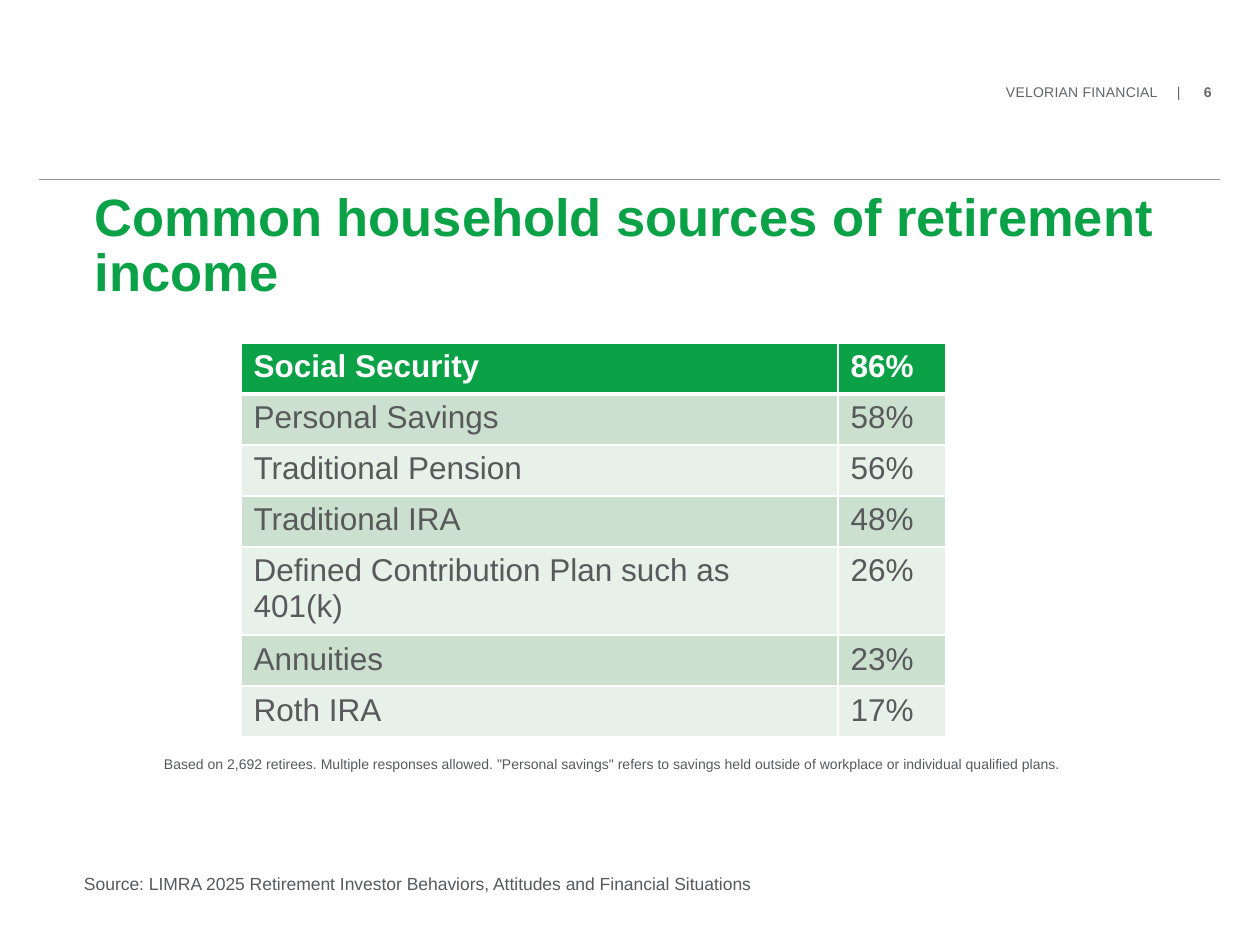
from dataclasses import dataclass
from lxml.etree import SubElement
from pptx import Presentation
from pptx.dml.color import RGBColor
from pptx.enum.shapes import MSO_CONNECTOR
from pptx.enum.text import MSO_ANCHOR, MSO_AUTO_SIZE, PP_ALIGN
from pptx.oxml.ns import qn
from pptx.util import Emu, Pt

PX_PER_INCH = 126
EMU_PER_PX = 914400 / PX_PER_INCH
FONT = "Arial"
COLORS = {
    "green": "0AA147",
    "text": "58595B",
    "header": "636466",
    "rule": "929497",
    "white": "FFFFFF",
    "band_dark": "CCE0CF",
    "band_light": "E7F0E9",
}


@dataclass(frozen=True)
class Span:
    text: str
    size: int
    color: str
    bold: bool = False
    spacing: int = 0  # hundredths of a point


@dataclass(frozen=True)
class Area:
    left: int
    top: int
    width: int
    height: int

    def emu(self) -> tuple[Emu, Emu, Emu, Emu]:
        return px(self.left), px(self.top), px(self.width), px(self.height)


@dataclass(frozen=True)
class IncomeSource:
    name: str
    share: int
    row_height: int = 51


INCOME_SOURCES = [
    IncomeSource("Social Security", 86),
    IncomeSource("Personal Savings", 58),
    IncomeSource("Traditional Pension", 56),
    IncomeSource("Traditional IRA", 48),
    IncomeSource("Defined Contribution Plan such as 401(k)", 26, 88),
    IncomeSource("Annuities", 23),
    IncomeSource("Roth IRA", 17),
]
COLUMN_WIDTHS = [597, 108]


def px(length: int) -> Emu:
    return Emu(round(length * EMU_PER_PX))


def color(name: str) -> RGBColor:
    return RGBColor.from_string(COLORS[name])


def add_span(para, span: Span) -> None:
    run = para.add_run()
    run.text = span.text
    run.font.name = FONT
    run.font.size = Pt(span.size)
    run.font.bold = span.bold
    run.font.color.rgb = color(span.color)
    if span.spacing:
        run.font._element.set("spc", str(span.spacing))


def set_insets(frame, left: int, top: int, right: int, bottom: int) -> None:
    frame.margin_left, frame.margin_top = px(left), px(top)
    frame.margin_right, frame.margin_bottom = px(right), px(bottom)


def add_text(page, area: Area, spans: list[Span], insets=(13, 6, 13, 6), tabs=()) -> None:
    """Add a one-paragraph box; tabs are px from the left inset."""
    box = page.shapes.add_textbox(*area.emu())
    frame = box.text_frame
    frame.word_wrap = True
    set_insets(frame, *insets)
    para = frame.paragraphs[0]
    if tabs:
        tab_list = SubElement(para._p.get_or_add_pPr(), qn("a:tabLst"))
        for position in tabs:
            SubElement(tab_list, qn("a:tab"), pos=str(px(position)), algn="l")
    for span in spans:
        add_span(para, span)


def add_header(page) -> None:
    add_text(
        page,
        Area(1004, 81, 220, 19),
        [
            Span("VELORIAN FINANCIAL", 8, "header", spacing=10),
            Span("\t|\t", 8, "header"),
            Span("6", 8, "header", bold=True),
        ],
        insets=(2, 3, 0, 0),
        tabs=(171, 198),
    )
    rule = page.shapes.add_connector(
        MSO_CONNECTOR.STRAIGHT, px(39), px(179), px(1220), px(179)
    )
    rule.line.color.rgb = color("rule")
    rule.line.width = Pt(0.5)
    SubElement(rule._element.spPr, qn("a:effectLst"))


def set_title(page, text: str) -> None:
    title = page.shapes.title
    title.left, title.top, title.width, title.height = Area(95, 193, 1071, 132).emu()
    frame = title.text_frame
    frame.word_wrap = True
    frame.auto_size = MSO_AUTO_SIZE.NONE
    frame.vertical_anchor = MSO_ANCHOR.TOP
    set_insets(frame, 0, 0, 0, 0)
    para = frame.paragraphs[0]
    para.alignment = PP_ALIGN.LEFT
    para.line_spacing = Pt(31)
    add_span(para, Span(text, 30, "green", bold=True))


def set_borders(cell, top: int, bottom: int) -> None:
    """Draw white borders, 1 pt at the sides; widths are points."""
    properties = cell._tc.get_or_add_tcPr()
    for side, width in (("L", 1), ("R", 1), ("T", top), ("B", bottom)):
        line = SubElement(properties, qn(f"a:ln{side}"), w=str(Pt(width)))
        fill = SubElement(line, qn("a:solidFill"))
        SubElement(fill, qn("a:srgbClr"), val=COLORS["white"])


def add_income_table(page) -> None:
    area = Area(241, 343, sum(COLUMN_WIDTHS), sum(s.row_height for s in INCOME_SOURCES))
    table = page.shapes.add_table(
        len(INCOME_SOURCES), len(COLUMN_WIDTHS), *area.emu()
    ).table
    for column, width in zip(table.columns, COLUMN_WIDTHS):
        column.width = px(width)
    for index, source in enumerate(INCOME_SOURCES):
        is_header = index == 0
        band = "green" if is_header else ("band_light", "band_dark")[index % 2]
        ink = "white" if is_header else "text"
        table.rows[index].height = px(source.row_height)
        for cell, text in zip(table.rows[index].cells, (source.name, f"{source.share}%")):
            set_borders(cell, top=3 if index == 1 else 1, bottom=3 if is_header else 1)
            cell.fill.solid()
            cell.fill.fore_color.rgb = color(band)
            add_span(cell.text_frame.paragraphs[0], Span(text, 18, ink, is_header))


def main() -> None:
    deck = Presentation()
    deck.slide_width, deck.slide_height = px(1260), px(945)
    page = deck.slides.add_slide(deck.slide_layouts[5])
    add_header(page)
    set_title(page, "Common household sources of retirement income")
    add_text(
        page,
        Area(71, 867, 1089, 34),
        [Span("Source: LIMRA 2025 Retirement Investor Behaviors, Attitudes and "
              "Financial Situations", 10, "text")],
    )
    add_income_table(page)
    add_text(
        page,
        Area(151, 738, 958, 50),
        [Span('Based on 2,692 retirees. Multiple responses allowed. "Personal savings" '
              "refers to savings held outside of workplace or individual qualified plans.",
              8, "text")],
        insets=(13, 25, 13, 6),
    )
    deck.save("out.pptx")


if __name__ == "__main__":
    main()
